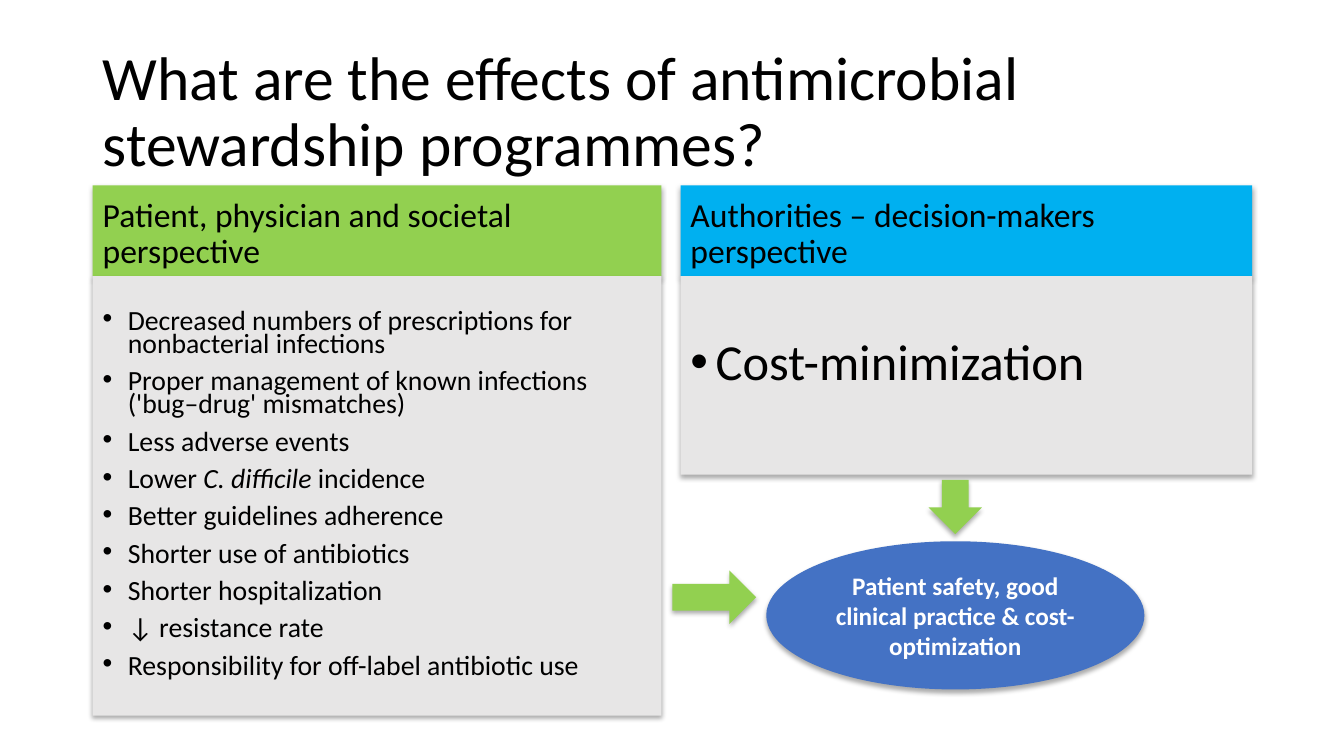
import pptx
import pptx.util
import pptx.oxml
import pptx.oxml.ns
import pptx.dml.color
import pptx.enum.shapes
import pptx.enum.text
from lxml import etree

Inches = pptx.util.Inches
Pt = pptx.util.Pt
RGBColor = pptx.dml.color.RGBColor
SHAPE = pptx.enum.shapes.MSO_SHAPE
ANCHOR = pptx.enum.text.MSO_ANCHOR
ALIGN = pptx.enum.text.PP_ALIGN
qn = pptx.oxml.ns.qn

BLACK = RGBColor(0x00, 0x00, 0x00)
WHITE = RGBColor(0xFF, 0xFF, 0xFF)
GREEN = RGBColor(0x92, 0xD0, 0x50)
CYAN = RGBColor(0x00, 0xB0, 0xF0)
GREY = RGBColor(0xE7, 0xE6, 0xE6)
BLUE = RGBColor(0x44, 0x72, 0xC4)

FONT = "Calibri"
HEAD_TOP, HEAD_HIGH = 1.84, 0.9
LIST_TOP = HEAD_TOP + HEAD_HIGH

# Each item is a list of (text, italic) runs.
EFFECTS = [
    [("Decreased numbers of prescriptions for nonbacterial infections", False)],
    [("Proper management of known infections ('bug–drug' mismatches)", False)],
    [("Less adverse events", False)],
    [("Lower ", False), ("C. difficile ", True), ("incidence", False)],
    [("Better guidelines adherence", False)],
    [("Shorter use of antibiotics", False)],
    [("Shorter hospitalization", False)],
    [("↓ resistance rate", False)],
    [("Responsibility for off-label antibiotic use", False)],
]
SAVINGS = [[("Cost-minimization", False)]]


def add_shade(shape):
    """Give the shape a soft shadow falling straight down."""
    shape.shadow.inherit = False
    effects = shape._element.spPr.find(qn("a:effectLst"))
    shade = etree.SubElement(
        effects, qn("a:outerShdw"), blurRad=str(Pt(3.5)), dist=str(Pt(2.2)),
        dir="5400000", algn="ctr", rotWithShape="0")
    color = etree.SubElement(shade, qn("a:srgbClr"), val=str(BLACK))
    etree.SubElement(color, qn("a:alpha"), val="32000")


def add_block(slide, kind, box, fill):
    shape = slide.shapes.add_shape(kind, *map(Inches, box))
    shape.fill.solid()
    shape.fill.fore_color.rgb = fill
    shape.line.fill.background()
    add_shade(shape)
    return shape


def set_text(shape, items, size, anchor, color=BLACK, align=ALIGN.LEFT,
             bold=False, lines=1.0, before=0):
    """Fill the shape with one paragraph per item."""
    frame = shape.text_frame
    frame.word_wrap = True
    frame.vertical_anchor = anchor
    for index, item in enumerate(items):
        para = frame.add_paragraph() if index else frame.paragraphs[0]
        para.alignment = align
        para.line_spacing = lines
        para.space_before = Pt(before)
        para.font.name = FONT
        para.font.size = Pt(size)
        para.font.bold = bold
        para.font.color.rgb = color
        for text, slant in item:
            run = para.add_run()
            run.text = text
            if slant:
                run.font.italic = True


def add_bullet(para):
    props = para._p.get_or_add_pPr()
    props.set("marL", str(Inches(0.25)))
    props.set("indent", str(Inches(-0.25)))
    mark = etree.Element(qn("a:buChar"), char="•")
    font = etree.Element(qn("a:buFont"), typeface="Arial")
    rest = props.find(qn("a:defRPr"))
    rest.addprevious(font)
    rest.addprevious(mark)


def add_title(slide, text):
    box = slide.shapes.add_textbox(
        Inches(0.92), Inches(0.4), Inches(11.5), Inches(1.45))
    set_text(box, [[(text, False)]], 44, ANCHOR.MIDDLE, lines=0.9)


def add_panel(slide, left, width, high, fill, head, items, size, lines, inset):
    """Add a coloured heading with a grey bullet list below it."""
    top = add_block(slide, SHAPE.RECTANGLE,
                    (left, HEAD_TOP, width, HEAD_HIGH), fill)
    set_text(top, [[(head, False)]], 24, ANCHOR.BOTTOM, lines=0.9, before=10)
    body = add_block(slide, SHAPE.RECTANGLE,
                     (left, LIST_TOP, width, high), GREY)
    set_text(body, items, size, ANCHOR.TOP, lines=lines, before=10)
    body.text_frame.margin_top = Inches(inset)
    for para in body.text_frame.paragraphs:
        add_bullet(para)


def main():
    deck = pptx.Presentation()
    deck.slide_width = Inches(13.33)
    deck.slide_height = Inches(7.5)
    slide = deck.slides.add_slide(deck.slide_layouts[6])

    add_title(slide, "What are the effects of antimicrobial "
                     "stewardship programmes?")
    add_panel(slide, 0.92, 5.64, 4.36, GREEN,
              "Patient, physician and societal perspective",
              EFFECTS, 19.8, 0.7, 0.35)
    add_panel(slide, 6.75, 5.67, 1.97, CYAN,
              "Authorities – decision-makers perspective",
              SAVINGS, 36, 0.9, 0.6)

    goal = add_block(slide, SHAPE.OVAL, (7.6, 5.37, 3.75, 1.47), BLUE)
    set_text(goal, [[("Patient safety, good clinical practice & "
                      "cost-optimization", False)]],
             18, ANCHOR.MIDDLE, WHITE, ALIGN.CENTER, bold=True)
    add_block(slide, SHAPE.RIGHT_ARROW, (6.67, 5.66, 0.83, 0.53), GREEN)
    add_block(slide, SHAPE.DOWN_ARROW, (9.21, 4.76, 0.53, 0.54), GREEN)

    deck.save("out.pptx")


if __name__ == "__main__":
    main()
